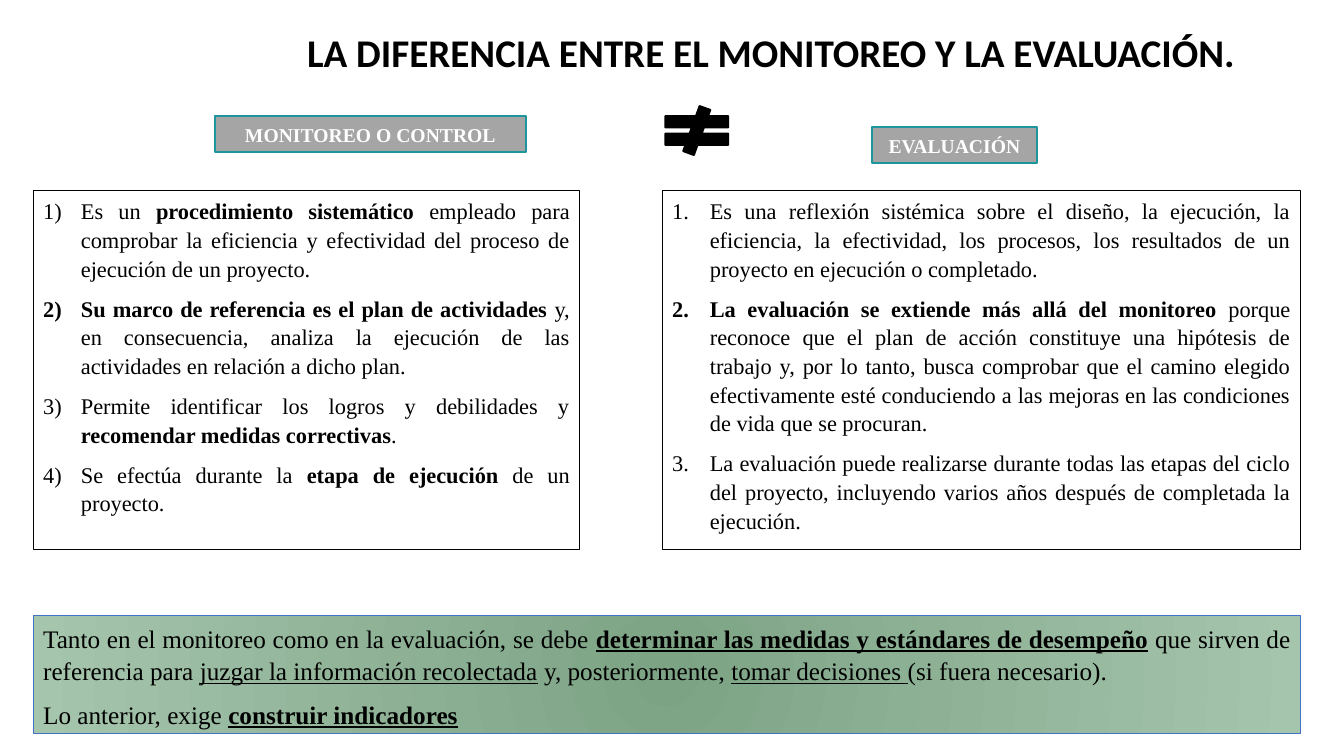
from lxml import etree
from pptx import Presentation
from pptx import util as u
from pptx.dml.color import RGBColor
from pptx.enum import shapes, text
from pptx.oxml import ns

THEME = {
    "black": RGBColor.from_string("000000"),
    "white": RGBColor.from_string("FFFFFF"),
    "label_fill": RGBColor.from_string("A5A5A5"),
    "label_line": RGBColor.from_string("1C969C"),
    "summary_line": RGBColor.from_string("4472C4"),
    "summary_center": RGBColor.from_string("7DA385"),
    "summary_edge": RGBColor.from_string("A5C5AD"),
    "heading_font": "Calibri",
    "body_font": "Times New Roman",
    "title_size": 28,
    "label_size": 14,
    "list_size": 16,
    "summary_size": 18,
}
LEFT, RIGHT = 0.84, 32.77
LIST_TOP, LIST_HEIGHT = 4.8, 9.04


def write(shape, paragraphs, size, font=THEME["body_font"], color=THEME["black"],
          align=text.PP_ALIGN.JUSTIFY, anchor=text.MSO_ANCHOR.TOP, spacing=1.07, numbering=None):
    """Fill a shape with paragraphs of (words, style) runs; style holds b and/or u."""
    frame = shape.text_frame
    frame.word_wrap = True
    frame.vertical_anchor = anchor
    for index, runs in enumerate(paragraphs):
        paragraph = frame.add_paragraph() if index else frame.paragraphs[0]
        paragraph.alignment = align
        paragraph.line_spacing = spacing
        paragraph.space_before = u.Pt(8 if index else 0)
        for words, style in runs:
            run = paragraph.add_run()
            run.text = words
            run.font.name = font
            run.font.size = u.Pt(size)
            run.font.color.rgb = color
            run.font.bold = "b" in style
            run.font.underline = "u" in style
        if numbering:
            properties = paragraph._p.get_or_add_pPr()
            properties.set("marL", str(u.Cm(0.95)))
            properties.set("indent", str(-u.Cm(0.95)))
            etree.SubElement(properties, ns.qn("a:buFont"), typeface="+mj-lt")
            etree.SubElement(properties, ns.qn("a:buAutoNum"), type=numbering)


def add_box(left, top, width, height, fill, line, line_width, kind=shapes.MSO_SHAPE.RECTANGLE):
    shape = slide.shapes.add_shape(kind, u.Cm(left), u.Cm(top), u.Cm(width), u.Cm(height))
    shape.shadow.inherit = False
    shape.fill.solid()
    shape.fill.fore_color.rgb = fill
    shape.line.color.rgb = line
    shape.line.width = u.Pt(line_width)
    return shape


presentation = Presentation()
presentation.slide_width, presentation.slide_height = u.Cm(33.87), u.Cm(19.05)
slide = presentation.slides.add_slide(presentation.slide_layouts[6])

# Title
title = slide.shapes.add_textbox(u.Cm(7.49), u.Cm(-0.66), u.Cm(27), u.Cm(4.17))
write(title, [[("LA DIFERENCIA ENTRE EL MONITOREO Y LA EVALUACIÓN.", "b")]],
      THEME["title_size"], font=THEME["heading_font"], align=text.PP_ALIGN.LEFT,
      anchor=text.MSO_ANCHOR.MIDDLE, spacing=0.8)

# Column labels
for words, left, top, width in [("EVALUACIÓN", 21.97, 3.2, 4.17),
                                ("MONITOREO O CONTROL", 5.41, 2.92, 7.85)]:
    label = add_box(left, top, width, 0.91, THEME["label_fill"], THEME["label_line"], 1.25)
    write(label, [[(words, "b")]], THEME["label_size"], color=THEME["white"],
          align=text.PP_ALIGN.CENTER)

# Not-equal sign between the labels
not_equal = add_box(16.48, 2.67, 2.16, 1.24, THEME["black"], THEME["black"], 1.25,
                    shapes.MSO_SHAPE.MATH_NOT_EQUAL)
for index, value in enumerate([0.235, 66, 0.118]):
    not_equal.adjustments[index] = value

# Numbered lists
monitoring = [
    [("Es un ", ""), ("procedimiento sistemático", "b"),
     (" empleado para comprobar la eficiencia y efectividad del proceso de ejecución "
      "de un proyecto. ", "")],
    [("Su marco de referencia es el plan de actividades ", "b"),
     ("y, en consecuencia, analiza la ejecución de las actividades en relación a dicho plan.", "")],
    [("Permite identificar los logros y debilidades y ", ""),
     ("recomendar medidas correctivas", "b"), (".", "")],
    [("Se efectúa durante la ", ""), ("etapa de ejecución", "b"), (" de un proyecto. ", "")],
]
evaluation = [
    [("Es una reflexión sistémica sobre el diseño, la ejecución, la eficiencia, la efectividad, "
      "los procesos, los resultados de un proyecto en ejecución o completado. ", "")],
    [("La evaluación se extiende más allá del monitoreo ", "b"),
     ("porque reconoce que el plan de acción constituye una hipótesis de trabajo y, por lo tanto, "
      "busca comprobar que el camino elegido efectivamente esté conduciendo a las mejoras en las "
      "condiciones de vida que se procuran.", "")],
    [("La evaluación puede realizarse durante todas las etapas del ciclo del proyecto, "
      "incluyendo varios años después de completada la ejecución.", "")],
]
for items, left, right, numbering in [(monitoring, LEFT, 14.61, "arabicParenR"),
                                      (evaluation, 16.69, RIGHT, "arabicPeriod")]:
    panel = add_box(left, LIST_TOP, right - left, LIST_HEIGHT,
                    THEME["white"], THEME["black"], 0.75)
    write(panel, items, THEME["list_size"], numbering=numbering)

# Summary with a radial gradient
summary = add_box(LEFT, 15.52, RIGHT - LEFT, 2.97,
                  THEME["summary_center"], THEME["summary_line"], 0.75)
summary.fill.gradient()
for stop, color in zip(summary.fill.gradient_stops,
                       [THEME["summary_center"], THEME["summary_edge"]]):
    stop.color.rgb = color
gradient = summary._element.spPr.find(ns.qn("a:gradFill"))
gradient.remove(gradient.find(ns.qn("a:lin")))
radial = etree.SubElement(gradient, ns.qn("a:path"), {"path": "circle"})
etree.SubElement(radial, ns.qn("a:fillToRect"), l="50000", t="50000", r="50000", b="50000")
write(summary, [
    [("Tanto en el monitoreo como en la evaluación, se debe ", ""),
     ("determinar las medidas y estándares de desempeño", "bu"),
     (" que sirven de referencia para ", ""), ("juzgar la información recolectada", "u"),
     (" y, posteriormente, ", ""), ("tomar decisiones ", "u"), ("(si fuera necesario).", "")],
    [("Lo anterior, exige ", ""), ("construir indicadores", "bu")],
], THEME["summary_size"])
summary.text_frame.auto_size = text.MSO_AUTO_SIZE.SHAPE_TO_FIT_TEXT

presentation.save("out.pptx")
